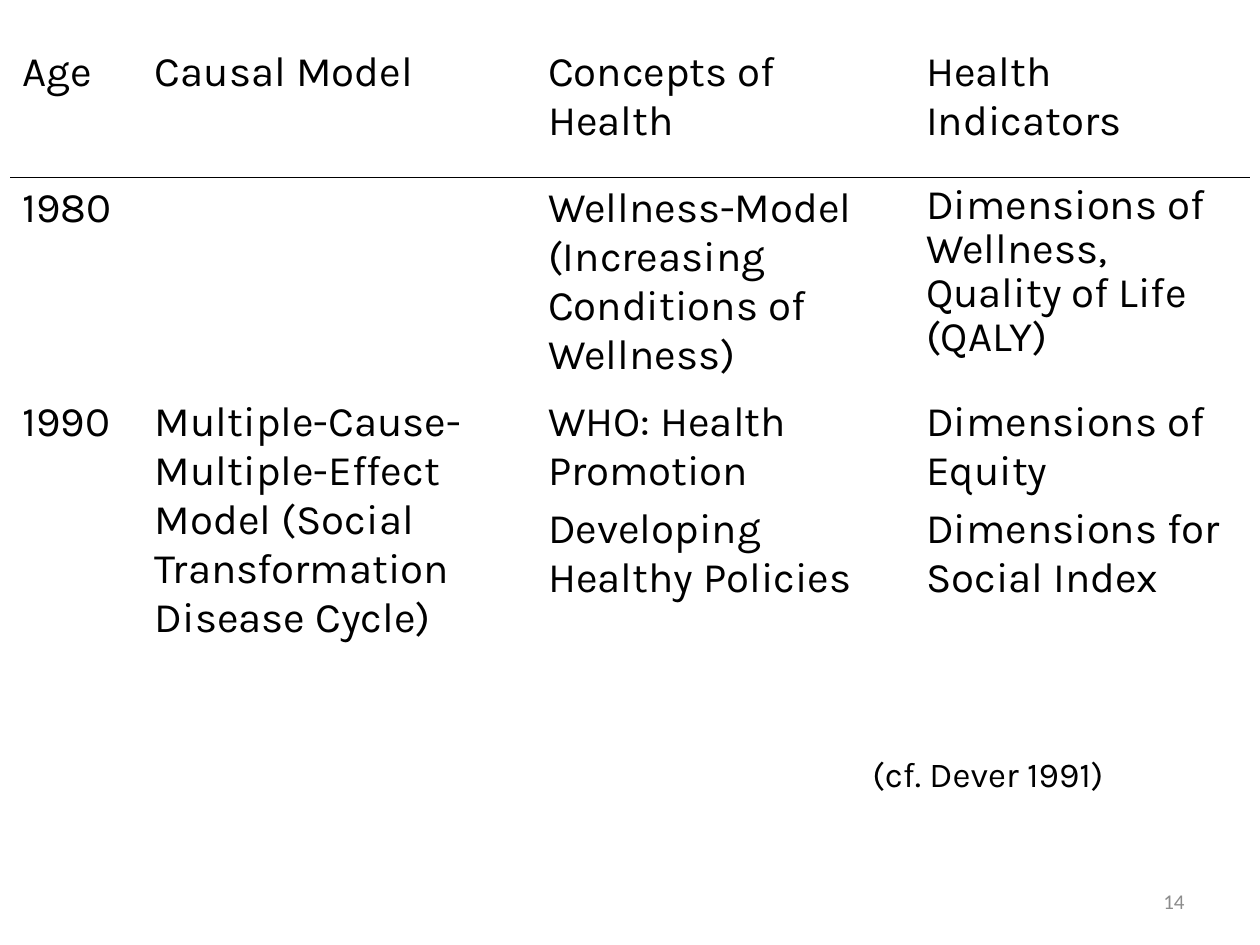
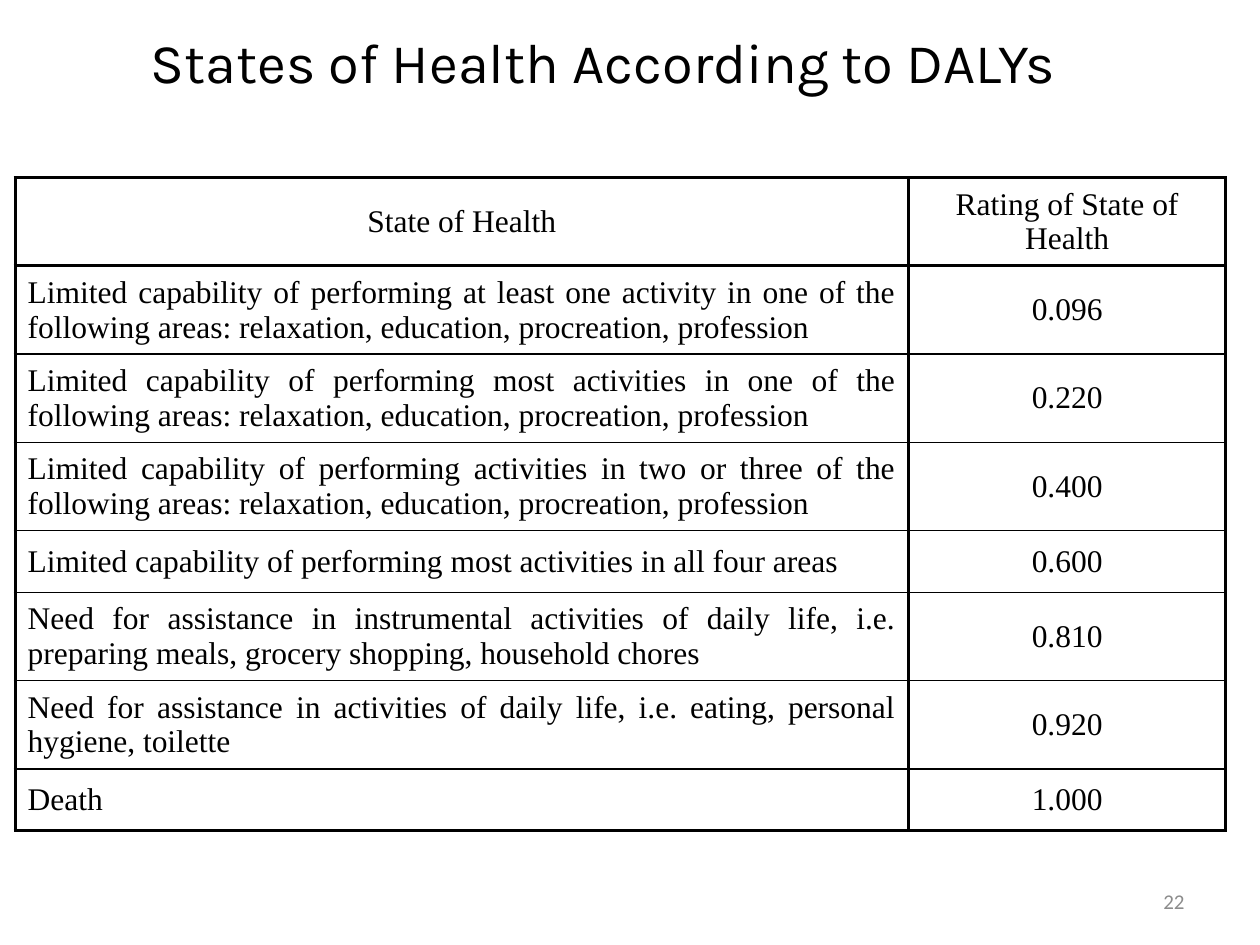
from lxml import etree
from pptx import Presentation
from pptx.dml.color import RGBColor
from pptx.enum.text import MSO_ANCHOR, PP_ALIGN
from pptx.oxml.ns import qn
from pptx.util import Inches, Pt

LEFT, CENTER, RIGHT, JUSTIFY = PP_ALIGN.LEFT, PP_ALIGN.CENTER, PP_ALIGN.RIGHT, PP_ALIGN.JUSTIFY
TOP, MIDDLE = MSO_ANCHOR.TOP, MSO_ANCHOR.MIDDLE

BLACK = RGBColor(0x00, 0x00, 0x00)
GRAY = RGBColor(0x8C, 0x8C, 0x8C)
HEADING_FONT = "Karla"
TABLE_FONT = "Times New Roman"
NUMBER_FONT = "Calibri"


def write(frame, lines, size, font, align=LEFT, color=BLACK):
    """Fill a text frame with one paragraph per line."""
    frame.word_wrap = True
    for index, line in enumerate(lines):
        para = frame.add_paragraph() if index else frame.paragraphs[0]
        para.text = line
        para.alignment = align
        para.font.size = Pt(size)
        para.font.name = font
        para.font.color.rgb = color


def style_cell(cell, anchor, widths):
    """Clear the fill and draw left, right, top and bottom borders; 0 means none."""
    cell.vertical_anchor = anchor
    properties = cell._tc.get_or_add_tcPr()
    for side, width in zip(("a:lnL", "a:lnR", "a:lnT", "a:lnB"), widths):
        line = etree.SubElement(properties, qn(side), w=str(Pt(width)))
        if width:
            fill = etree.SubElement(line, qn("a:solidFill"))
            etree.SubElement(fill, qn("a:srgbClr"), val=str(BLACK))
        else:
            etree.SubElement(line, qn("a:noFill"))
    cell.fill.background()


deck = Presentation()
deck.slide_width, deck.slide_height = Inches(10), Inches(7.5)
blank = deck.slide_layouts[6]

# Table contents: each cell is a list of paragraphs
AREAS = "following areas: relaxation, education, procreation, profession"
concept_rows = [
    [["Age"], ["Causal Model"], ["Concepts of Health"], ["Health Indicators"]],
    [["1980"], [],
     ["Wellness-Model (Increasing Conditions of Wellness)"],
     ["Dimensions of Wellness, Quality of Life (QALY)"]],
    [["1990"],
     ["Multiple-Cause-Multiple-Effect Model (Social Transformation Disease Cycle)"],
     ["WHO: Health Promotion", "Developing Healthy Policies"],
     ["Dimensions of Equity", "Dimensions for Social Index"]],
]
rating_rows = [
    [["State of Health"], ["Rating of State of Health"]],
    [[f"Limited capability of performing at least one activity in one of the {AREAS}"], ["0.096"]],
    [[f"Limited capability of performing most activities in one of the {AREAS}"], ["0.220"]],
    [[f"Limited capability of performing activities in two or three of the {AREAS}"], ["0.400"]],
    [["Limited capability of performing most activities in all four areas"], ["0.600"]],
    [["Need for assistance in instrumental activities of daily life, i.e. "
      "preparing meals, grocery shopping, household chores"], ["0.810"]],
    [["Need for assistance in activities of daily life, i.e. eating, "
      "personal hygiene, toilette"], ["0.920"]],
    [["Death"], ["1.000"]],
]

# Slides: number, caption (text, place, size), table place, column widths, row heights, rows
slides = [
    (14, ("(cf. Dever 1991) ", (5.75, 5.92, 4.25, 0.43), 20),
     (0.08, 0.33), (1.05, 3.12, 3, 2.67), (1.08, 1.65, 2.15), concept_rows),
    (22, ("States of Health According to DALYs", (0.33, 0.17, 8.92, 0.63), 32),
     (0.12, 1.41), (7.09, 2.52), (0.7, 0.7, 0.7, 0.7, 0.49, 0.7, 0.7, 0.49), rating_rows),
]
tables = []
for number, caption, place, widths, heights, rows in slides:
    page = deck.slides.add_slide(blank)

    # Caption
    text, area, size = caption
    box = page.shapes.add_textbox(*map(Inches, area))
    write(box.text_frame, [text], size, HEADING_FONT, CENTER)

    # Table grid
    table = page.shapes.add_table(
        len(rows), len(widths), *map(Inches, place),
        Inches(sum(widths)), Inches(sum(heights))).table
    table.first_row = table.horz_banding = False
    for column, width in zip(table.columns, widths):
        column.width = Inches(width)
    for row, height in zip(table.rows, heights):
        row.height = Inches(height)
    tables.append(table)

    # Slide number
    box = page.shapes.add_textbox(Inches(7.17), Inches(6.95), Inches(2.33), Inches(0.4))
    box.text_frame.vertical_anchor = MIDDLE
    write(box.text_frame, [str(number)], 12, NUMBER_FONT, RIGHT, GRAY)

concept_table, rating_table = tables

# Concepts of health: a single rule below the header
for r, row in enumerate(concept_rows):
    for c, lines in enumerate(row):
        cell = concept_table.cell(r, c)
        write(cell.text_frame, lines or [""], 24, HEADING_FONT)
        for para in cell.text_frame.paragraphs:
            para.space_before = Pt(5)
        style_cell(cell, TOP, (0, 0, int(r == 1), int(r == 0)))
concept_table.cell(1, 3).text_frame.paragraphs[0].line_spacing = 0.9

# State ratings: heavy frame and header, thin rules between the rows
last = len(rating_rows) - 1
for r, row in enumerate(rating_rows):
    for c, lines in enumerate(row):
        cell = rating_table.cell(r, c)
        align = JUSTIFY if r and c == 0 else CENTER
        write(cell.text_frame, lines, 18, TABLE_FONT, align)
        style_cell(cell, MIDDLE, (2, 2, 2 if r < 2 else 1, 2 if r in (0, last) else 1))

deck.save("out.pptx")
